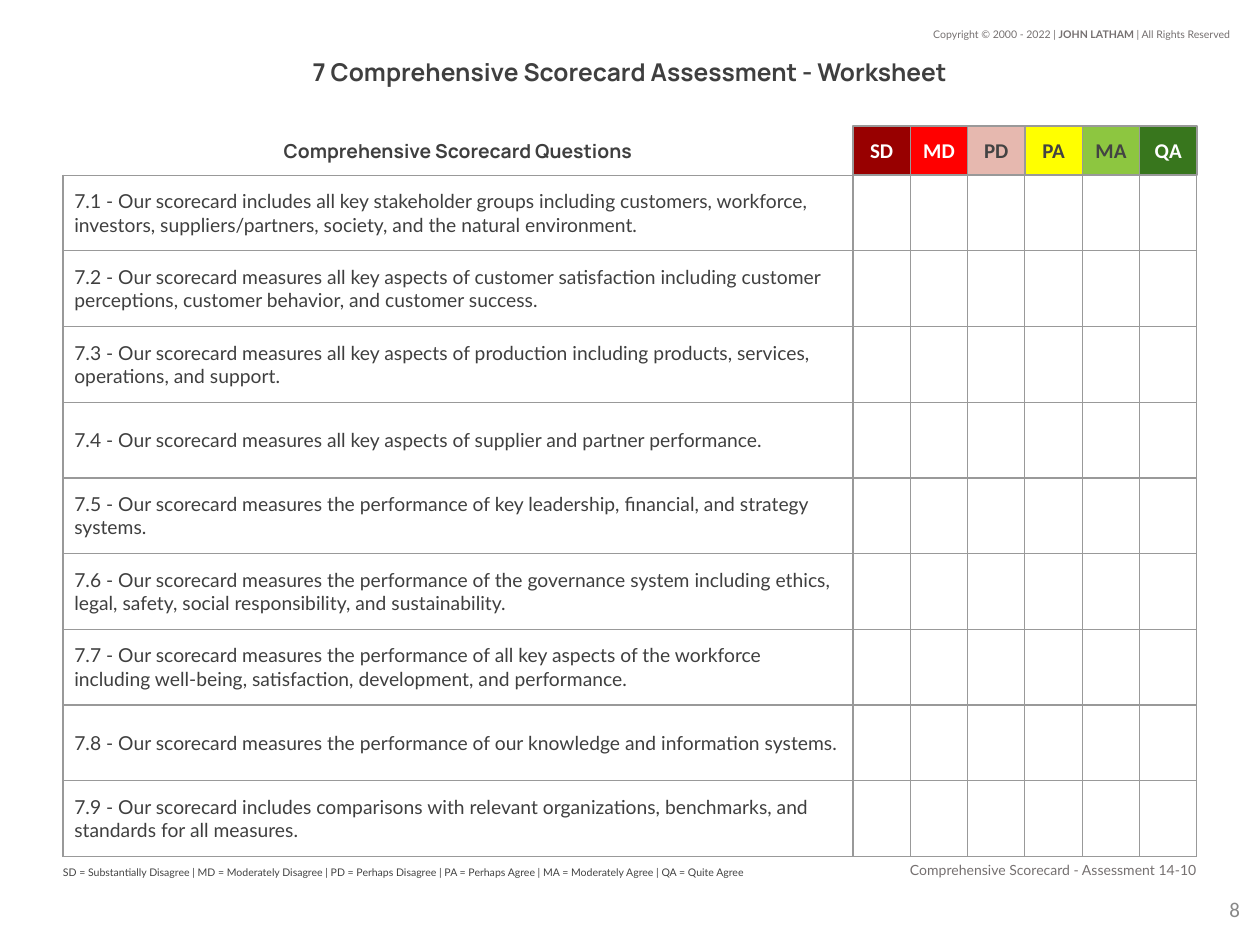
from lxml.etree import SubElement
from pptx import Presentation
from pptx.dml.color import RGBColor
from pptx.enum.shapes import MSO_SHAPE
from pptx.enum.text import MSO_ANCHOR, MSO_AUTO_SIZE, PP_ALIGN
from pptx.oxml.ns import qn
from pptx.util import Inches, Pt

TITLE = "7 Comprehensive Scorecard Assessment - Worksheet"
HEADING = "Comprehensive Scorecard Questions"
COPYRIGHT = [("Copyright © 2000 - 2022 | ", False), ("JOHN LATHAM ", True),
             ("| All Rights Reserved", False)]
FOOTER = "Comprehensive Scorecard - Assessment 14-10"
PAGE = "8"
RATINGS = [
    ("SD", "Substantially Disagree", "980000", "FFFFFF"),
    ("MD", "Moderately Disagree", "FF0000", "FFFFFF"),
    ("PD", "Perhaps Disagree", "E6B8AF", "434343"),
    ("PA", "Perhaps Agree", "FFFF00", "434343"),
    ("MA", "Moderately Agree", "8DC640", "434343"),
    ("QA", "Quite Agree", "38761D", "FFFFFF"),
]
QUESTIONS = [
    "Our scorecard includes all key stakeholder groups including customers, workforce, "
    "investors, suppliers/partners, society, and the natural environment.",
    "Our scorecard measures all key aspects of customer satisfaction including customer "
    "perceptions, customer behavior, and customer success.",
    "Our scorecard measures all key aspects of production including products, services, "
    "operations, and support.",
    "Our scorecard measures all key aspects of supplier and partner performance.",
    "Our scorecard measures the performance of key leadership, financial, and strategy systems.",
    "Our scorecard measures the performance of the governance system including ethics, "
    "legal, safety, social responsibility, and sustainability.",
    "Our scorecard measures the performance of all key aspects of the workforce "
    "including well-being, satisfaction, development, and performance.",
    "Our scorecard measures the performance of our knowledge and information systems.",
    "Our scorecard includes comparisons with relevant organizations, benchmarks, and "
    "standards for all measures.",
]

DARK, GRAY, GRID = "3F3F3F", "757070", "999999"
LEFT, RIGHT = 0.5, 9.5
HEAD_TOP, TABLE_TOP, TABLE_BOTTOM = 1, 1.39, 6.8
QUESTION_W = 6.27
RATING_LEFT = LEFT + QUESTION_W
RATING_W = (RIGHT - RATING_LEFT) / len(RATINGS)
ROW_H = (TABLE_BOTTOM - TABLE_TOP) / len(QUESTIONS)


def rgb(color):
    return RGBColor.from_string(color)


def style(p, size, font, color, bold=None, align=PP_ALIGN.LEFT):
    p.alignment = align
    p.font.size, p.font.name, p.font.bold = Pt(size), font, bold
    p.font.color.rgb = rgb(color)


def set_frame(tf, anchor=MSO_ANCHOR.MIDDLE, margins=(0.1, 0.1, 0.1, 0.1)):
    """Wrap the text and set its margins as left, top, right, bottom."""
    tf.word_wrap = True
    tf.vertical_anchor = anchor
    tf.margin_left, tf.margin_top, tf.margin_right, tf.margin_bottom = map(Inches, margins)


def add_text(s, box, text, size, font, color, bold=None, align=PP_ALIGN.LEFT, **frame):
    tf = s.shapes.add_textbox(*map(Inches, box)).text_frame
    set_frame(tf, **frame)
    tf.text = text
    style(tf.paragraphs[0], size, font, color, bold, align)
    return tf


def add_copyright(s):
    tf = add_text(s, (7.28, 0.17, 2.58, 0.2), "", 6, "Lato", GRAY, align=PP_ALIGN.RIGHT,
                  anchor=MSO_ANCHOR.TOP, margins=(0.1, 0.05, 0.1, 0.05))
    tf.auto_size = MSO_AUTO_SIZE.SHAPE_TO_FIT_TEXT
    for text, bold in COPYRIGHT:
        r = tf.paragraphs[0].add_run()
        r.text, r.font.bold = text, bold


def set_borders(cell):
    tc_pr = cell._tc.get_or_add_tcPr()
    for i, side in enumerate(("a:lnL", "a:lnR", "a:lnT", "a:lnB")):
        ln = SubElement(tc_pr, qn(side), w=str(Pt(0.75)))
        fill = SubElement(ln, qn("a:solidFill"))
        SubElement(fill, qn("a:srgbClr"), val=GRID)
        tc_pr.insert(i, ln)


def add_questions(s):
    table = s.shapes.add_table(
        len(QUESTIONS), 1 + len(RATINGS), Inches(LEFT), Inches(TABLE_TOP),
        Inches(RIGHT - LEFT), Inches(TABLE_BOTTOM - TABLE_TOP)).table
    table.first_row = table.horz_banding = False
    for i, col in enumerate(table.columns):
        col.width = Inches(RATING_W if i else QUESTION_W)
    for i, question in enumerate(QUESTIONS):
        table.rows[i].height = Inches(ROW_H)
        cell = table.cell(i, 0)
        cell.text = f"7.{i + 1} - {question}"
        cell.vertical_anchor = MSO_ANCHOR.MIDDLE
        cell.margin_left = cell.margin_right = Inches(0.09)
        cell.margin_top = cell.margin_bottom = Inches(0.09)
        style(cell.text_frame.paragraphs[0], 11, "Lato", DARK)
    for cell in table.iter_cells():
        cell.fill.background()
        set_borders(cell)


def add_rating(s, i, code, fill, color):
    sp = s.shapes.add_shape(
        MSO_SHAPE.RECTANGLE, Inches(RATING_LEFT + i * RATING_W), Inches(HEAD_TOP),
        Inches(RATING_W), Inches(TABLE_TOP - HEAD_TOP))
    sp.shadow.inherit = False
    sp.fill.solid()
    sp.fill.fore_color.rgb = rgb(fill)
    sp.line.color.rgb = rgb(GRID)
    sp.line.width = Pt(0.75)
    set_frame(sp.text_frame)
    sp.text_frame.text = code
    style(sp.text_frame.paragraphs[0], 12, "Calibri", color, True, PP_ALIGN.CENTER)


def main():
    prs = Presentation()
    prs.slide_width, prs.slide_height = Inches(10), Inches(7.5)
    s = prs.slides.add_slide(prs.slide_layouts[6])

    add_copyright(s)
    add_text(s, (LEFT, 0.42, RIGHT - LEFT, 0.3), TITLE, 14, "Manrope", DARK, True,
             PP_ALIGN.CENTER)
    add_text(s, (LEFT, HEAD_TOP, QUESTION_W, TABLE_TOP - HEAD_TOP), HEADING, 11, "Manrope",
             DARK, True, PP_ALIGN.CENTER)
    add_questions(s)
    for i, (code, _, fill, color) in enumerate(RATINGS):
        add_rating(s, i, code, fill, color)

    legend = " | ".join(f"{code} = {meaning}" for code, meaning, _, _ in RATINGS)
    add_text(s, (LEFT, 6.78, QUESTION_W, 0.28), legend, 6, "Lato", "434343",
             margins=(0, 0.1, 0.1, 0.1))
    add_text(s, (RATING_LEFT, 6.8, RIGHT - RATING_LEFT, 0.21), FOOTER, 8, "Lato", GRAY,
             align=PP_ALIGN.RIGHT, margins=(0.1, 0.1, 0, 0.1))
    add_text(s, (9.34, 6.93, 0.6, 0.57), PAGE, 12, "Calibri", "888888", align=PP_ALIGN.RIGHT)
    prs.save("out.pptx")


if __name__ == "__main__":
    main()
